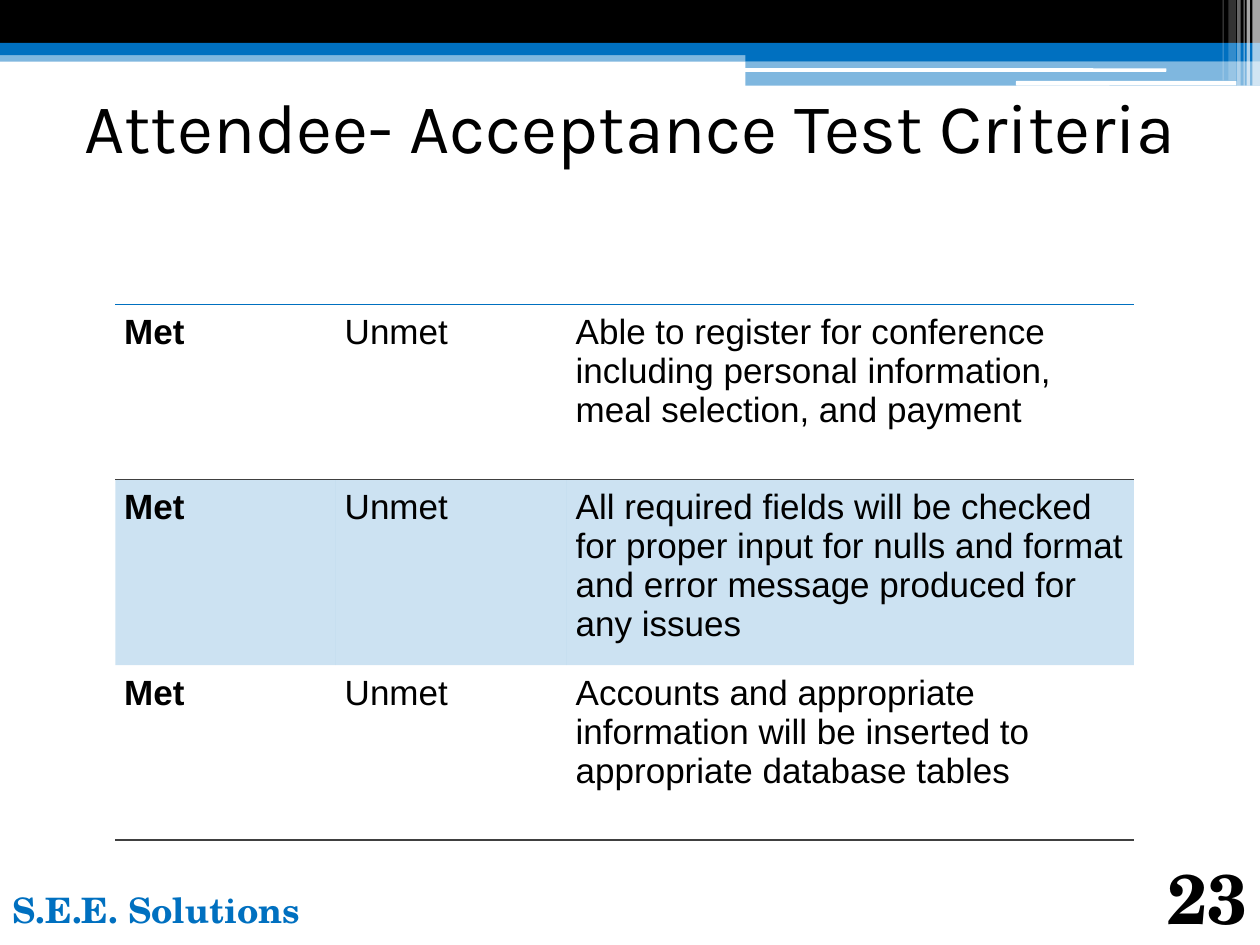
from dataclasses import dataclass

from lxml import etree
from pptx import Presentation
from pptx.dml.color import RGBColor
from pptx.enum.shapes import MSO_SHAPE
from pptx.enum.text import MSO_ANCHOR, PP_ALIGN
from pptx.oxml.ns import qn
from pptx.util import Pt

RECT, ROUNDED = MSO_SHAPE.RECTANGLE, MSO_SHAPE.ROUNDED_RECTANGLE
TOP, MIDDLE, BOTTOM = MSO_ANCHOR.TOP, MSO_ANCHOR.MIDDLE, MSO_ANCHOR.BOTTOM
LEFT, CENTER, RIGHT = PP_ALIGN.LEFT, PP_ALIGN.CENTER, PP_ALIGN.RIGHT


@dataclass(frozen=True)
class Theme:
    blue: str = "0070C0"
    black: str = "000000"
    white: str = "FFFFFF"
    rule: str = "404040"
    title_font: str = "Karla"
    body_font: str = "Arial"
    footer_font: str = "TeX Gyre Schola"
    large: int = 40
    body: int = 20
    cell_margin: float = 5
    rule_width: float = 1


class SlideBuilder:
    def __init__(self, prs, theme):
        self.theme = theme
        self.slide = prs.slides.add_slide(prs.slide_layouts[6])

    def set_fill(self, fill, color, opacity=100):
        fill.solid()
        fill.fore_color.rgb = RGBColor.from_string(color)
        if opacity < 100:
            clr = fill._xPr.find(".//" + qn("a:srgbClr"))
            etree.SubElement(clr, qn("a:alpha"), val=str(opacity * 1000))

    def set_font(self, p, font, size, color, bold=False):
        p.font.name = font
        p.font.size = Pt(size)
        p.font.bold = bold
        p.font.color.rgb = RGBColor.from_string(color)

    def bar(self, x, y, w, h, color, opacity=100, kind=RECT):
        sp = self.slide.shapes.add_shape(kind, Pt(x), Pt(y), Pt(w), Pt(h))
        sp.shadow.inherit = False
        sp.line.fill.background()
        self.set_fill(sp.fill, color, opacity)

    def text(self, x, y, w, h, text, font, size, color, bold=False,
             align=LEFT, anchor=TOP):
        sp = self.slide.shapes.add_textbox(Pt(x), Pt(y), Pt(w), Pt(h))
        tf = sp.text_frame
        tf.word_wrap = True
        tf.vertical_anchor = anchor
        p = tf.paragraphs[0]
        p.text = text
        p.alignment = align
        self.set_font(p, font, size, color, bold)

    def set_borders(self, cell, top, bottom):
        """Draw the given top and bottom colours; None leaves an edge bare."""
        tc_pr = cell._tc.get_or_add_tcPr()
        edges = {"lnL": None, "lnR": None, "lnT": top, "lnB": bottom}
        for i, (tag, color) in enumerate(edges.items()):
            ln = etree.Element(qn("a:" + tag), w=str(Pt(self.theme.rule_width)))
            if color:
                fill = etree.SubElement(ln, qn("a:solidFill"))
                etree.SubElement(fill, qn("a:srgbClr"), val=color)
            else:
                etree.SubElement(ln, qn("a:noFill"))
            tc_pr.insert(i, ln)

    def table(self, x, y, widths, row_height, rows, rules):
        """Rules holds one colour, or None, for each horizontal grid line."""
        t = self.theme
        table = self.slide.shapes.add_table(
            len(rows), len(widths), Pt(x), Pt(y),
            Pt(sum(widths)), Pt(row_height * len(rows))).table
        table.first_row = table.horz_banding = False
        table.first_col = True
        for column, width in zip(table.columns, widths):
            column.width = Pt(width)
        for i, row in enumerate(rows):
            table.rows[i].height = Pt(row_height)
            for j, text in enumerate(row):
                cell = table.cell(i, j)
                cell.margin_left = cell.margin_right = Pt(t.cell_margin)
                cell.margin_top = cell.margin_bottom = Pt(t.cell_margin)
                if i % 2:
                    self.set_fill(cell.fill, t.blue, 20)
                else:
                    cell.fill.background()
                self.set_borders(cell, rules[i], rules[i + 1])
                p = cell.text_frame.paragraphs[0]
                p.text = text
                self.set_font(p, t.body_font, t.body, t.black, bold=j == 0)


def add_banner(s):
    t = s.theme
    s.bar(0, 28.8, 720, 6.5, t.blue, 50)
    s.bar(0, 0, 720, 24.5, t.black)
    s.bar(0, 24.5, 720, 7, t.blue)
    s.bar(426, 28, 294, 7, t.blue)
    s.bar(426, 35, 294, 14, t.blue, 50)
    s.bar(425.5, 39, 241, 2, t.white, kind=ROUNDED)
    s.bar(580.5, 46.3, 126, 2.6, t.white, kind=ROUNDED)
    stripes = [(715.7, 4.3, 49, 65), (712.3, 2, 49, 65), (710.6, 0.7, 49, 60),
               (707, 2, 49, 40), (702, 4.3, 46, 20), (698.6, 0.7, 46, 30)]
    for x, w, h, opacity in stripes:
        s.bar(x, 0, w, h, t.white, opacity)


def main():
    prs = Presentation()
    prs.slide_width, prs.slide_height = Pt(720), Pt(540)
    t = Theme()
    s = SlideBuilder(prs, t)
    add_banner(s)
    s.text(36, 36, 648, 72, "Attendee- Acceptance Test Criteria",
           t.title_font, t.large, t.black, align=CENTER, anchor=MIDDLE)
    s.text(0, 504, 180, 36, "S.E.E. Solutions",
           t.footer_font, t.body, t.blue, bold=True)
    s.text(648, 497, 72, 43, "23", t.footer_font, t.large, t.black,
           bold=True, align=RIGHT, anchor=BOTTOM)
    criteria = [
        "Able to register for conference including personal information, "
        "meal selection, and payment",
        "All required fields will be checked for proper input for nulls and "
        "format and error message produced for any issues",
        "Accounts and appropriate information will be inserted to "
        "appropriate database tables",
    ]
    s.table(66, 174, [126, 132, 324], 100,
            [("Met", "Unmet", criterion) for criterion in criteria],
            [t.blue, t.rule, None, t.rule])
    prs.save("out.pptx")


if __name__ == "__main__":
    main()
